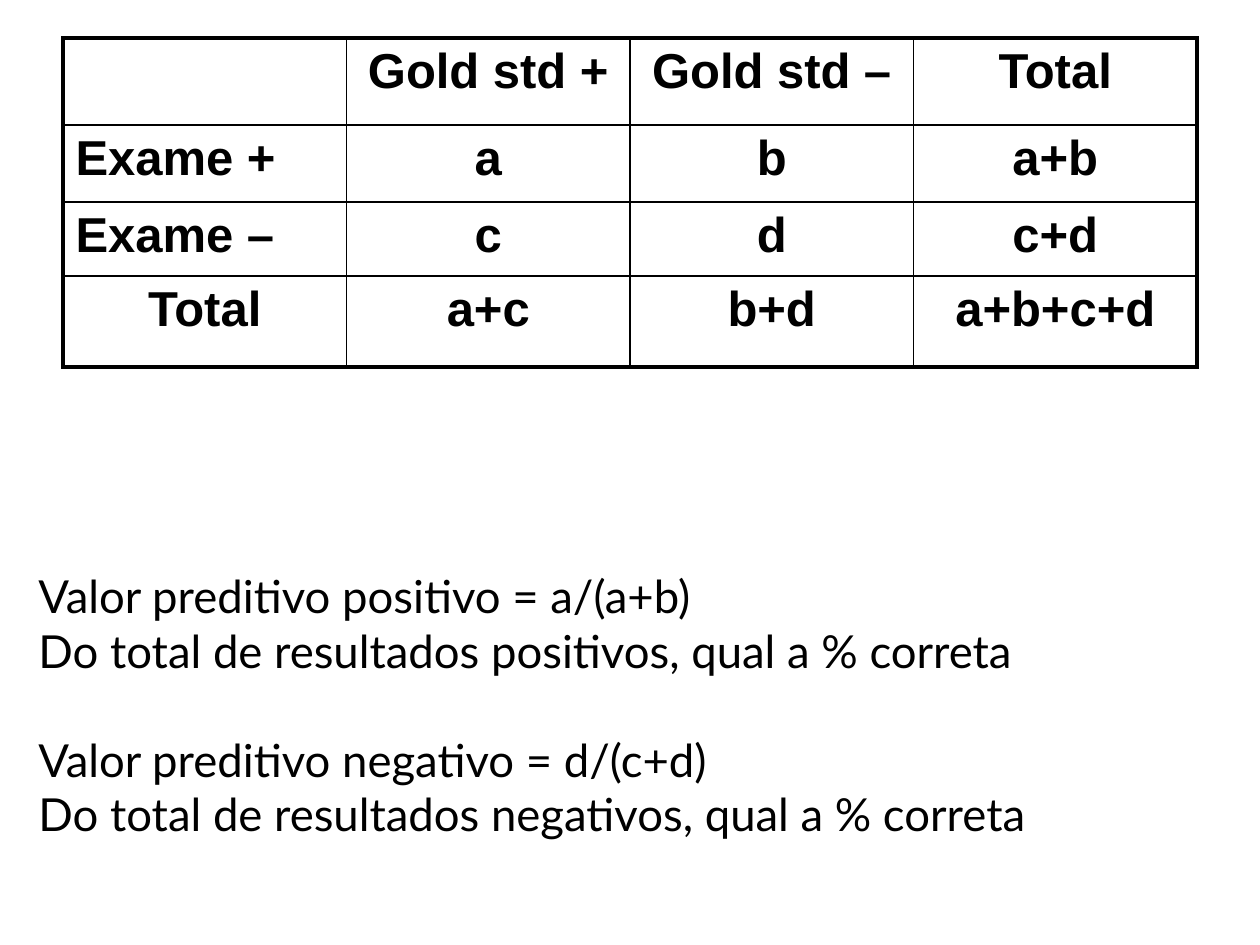
"""Build a slide with a diagnostic test table and the predictive value formulas."""
from lxml.etree import SubElement
from pptx import Presentation
from pptx.dml.color import RGBColor
from pptx.enum.text import MSO_AUTO_SIZE, PP_ALIGN
from pptx.oxml.ns import qn
from pptx.util import Emu, Pt

BLACK = RGBColor(0x00, 0x00, 0x00)
EMU_PER_PX = 914400 / 126
THIN, THICK = 1, 2.25

ROW_HEIGHTS = [87, 77, 74, 91]
CONTINGENCY = [
    ["", "Gold std +", "Gold std –", "Total"],
    ["Exame +", "a", "b", "a+b"],
    ["Exame –", "c", "d", "c+d"],
    ["Total", "a+c", "b+d", "a+b+c+d"],
]
DEFINITIONS = [
    ("Valor preditivo positivo = a/(a+b)",
     "Do total de resultados positivos, qual a % correta"),
    ("Valor preditivo negativo = d/(c+d)",
     "Do total de resultados negativos, qual a % correta"),
]


def px(length):
    return Emu(round(length * EMU_PER_PX))


def style(paragraph, font_name, size, bold=False):
    font = paragraph.font
    font.name, font.size, font.bold = font_name, Pt(size), bold
    font.color.rgb = BLACK


def set_borders(cell, widths):
    properties = cell._tc.get_or_add_tcPr()
    for side, width in widths.items():
        line = SubElement(properties, qn(f"a:ln{side}"), w=str(Pt(width)))
        fill = SubElement(line, qn("a:solidFill"))
        SubElement(fill, qn("a:srgbClr"), val=str(BLACK))


def add_contingency_table(slide, left, top, width):
    count = len(CONTINGENCY)
    last = count - 1
    table = slide.shapes.add_table(
        count, count, px(left), px(top), px(width), px(sum(ROW_HEIGHTS))).table
    table.first_row = table.horz_banding = False
    for row, height in zip(table.rows, ROW_HEIGHTS):
        row.height = px(height)
    for r, labels in enumerate(CONTINGENCY):
        for c, label in enumerate(labels):
            cell = table.cell(r, c)
            set_borders(cell, {
                "L": THICK if c == 0 else THIN,
                "R": THICK if c == last else THIN,
                "T": THICK if r == 0 else THIN,
                "B": THICK if r == last else THIN,
            })
            cell.fill.background()
            cell.text = label
            entry = cell.text_frame.paragraphs[0]
            is_exam = c == 0 and r < last
            entry.alignment = PP_ALIGN.LEFT if is_exam else PP_ALIGN.CENTER
            style(entry, "Arial", 28, bold=True)


def add_definitions(slide, left, top, width, height):
    frame = slide.shapes.add_textbox(
        px(left), px(top), px(width), px(height)).text_frame
    frame.word_wrap = True
    frame.auto_size = MSO_AUTO_SIZE.SHAPE_TO_FIT_TEXT
    frame.text = "\n".join(line for pair in DEFINITIONS for line in pair)
    for paragraph in frame.paragraphs:
        style(paragraph, "Lato", 26)
    frame.paragraphs[2].space_before = Pt(31.2)


def main():
    presentation = Presentation()
    presentation.slide_width, presentation.slide_height = px(1260), px(945)
    slide = presentation.slides.add_slide(presentation.slide_layouts[6])
    add_definitions(slide, 26, 562, 1207, 289)
    add_contingency_table(slide, 63, 38, 1134)
    presentation.save("out.pptx")


if __name__ == "__main__":
    main()
